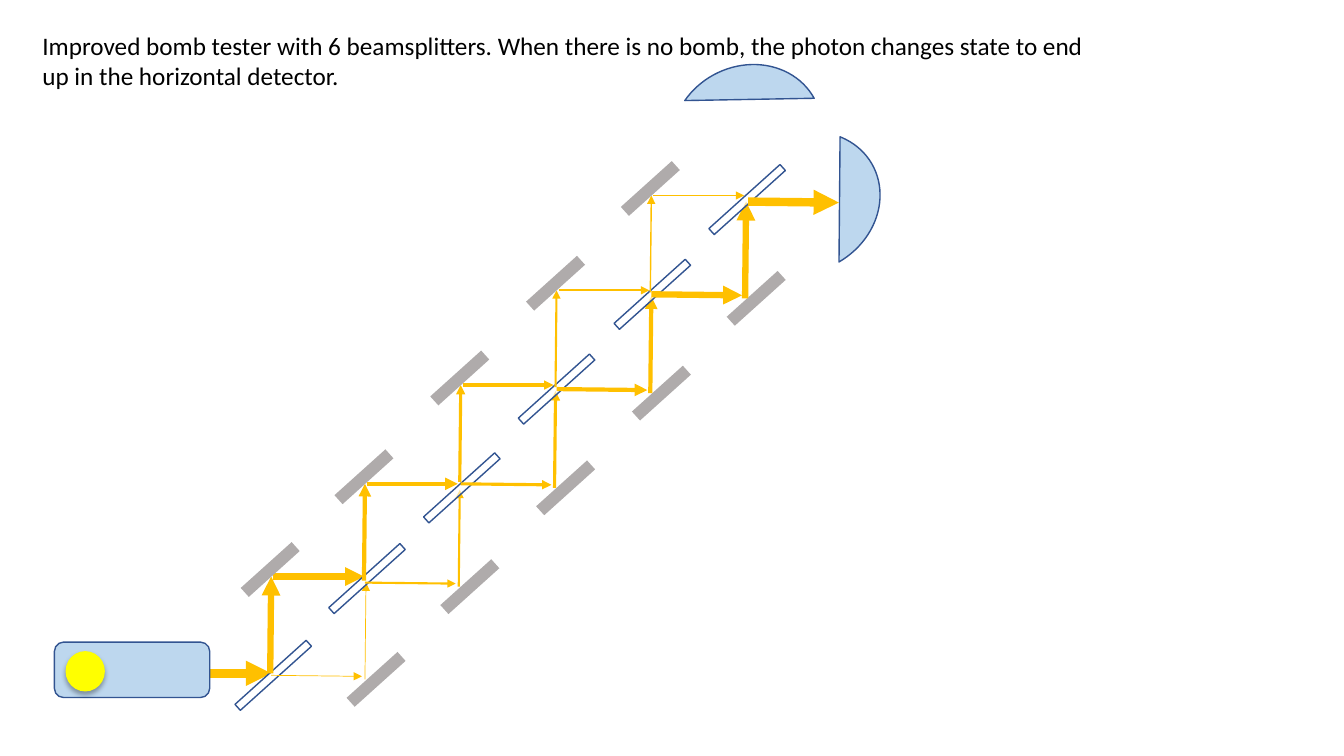
import dataclasses
import pptx
import pptx.dml.color
import pptx.enum.shapes
import pptx.enum.text
import pptx.oxml
import pptx.oxml.ns
import pptx.util

Inches = pptx.util.Inches
Pt = pptx.util.Pt
Kind = pptx.enum.shapes.MSO_SHAPE


@dataclasses.dataclass(frozen=True)
class Theme:
    font: str = "Calibri"
    size: float = 18
    ink: str = "000000"
    beam: str = "FFC000"
    mirror: str = "AFABAB"
    glass: str = "FFFFFF"
    body: str = "BDD7EE"
    edge: str = "325491"
    photon: str = "FFFF00"
    main: float = 6


THEME = Theme()
TILT = 48
STAGES = [
    ((2.68, 6.68), (2.71, 6.70), 4.5, 0.5),
    ((3.61, 5.76), (3.64, 5.74), 3, 1.5),
    ((4.56, 4.78), (4.58, 4.84), 2.25, 2.25),
    ((5.51, 3.84), (5.52, 3.86), 1.5, 3),
    ((6.45, 2.90), (6.47, 2.92), 1, 4.5),
]


def rgb(code):
    return pptx.dml.color.RGBColor.from_string(code)


def add_xml(parent, body):
    parent.append(pptx.oxml.parse_xml(body.replace(
        ">", " " + pptx.oxml.ns.nsdecls("a") + ">", 1)))


def solid(slide, kind, box, fill, edge=None, turn=0):
    shape = slide.shapes.add_shape(kind, *[Inches(v) for v in box])
    shape.shadow.inherit = False
    shape.rotation = turn
    shape.fill.solid()
    shape.fill.fore_color.rgb = rgb(fill)
    if edge:
        shape.line.color.rgb = rgb(edge)
        shape.line.width = Pt(1)
    else:
        shape.line.fill.background()
    return shape


def beam(slide, start, end, width):
    line = slide.shapes.add_connector(
        pptx.enum.shapes.MSO_CONNECTOR.STRAIGHT,
        *[Inches(v) for v in (*start, *end)])
    line.line.color.rgb = rgb(THEME.beam)
    line.line.width = Pt(width)
    add_xml(line.line._get_or_add_ln(), '<a:tailEnd type="triangle"></a:tailEnd>')
    add_xml(line._element.spPr, "<a:effectLst></a:effectLst>")


def plate(slide, center, size, fill, edge=None):
    x, y = center
    w, h = size
    return solid(slide, Kind.RECTANGLE, (x - w / 2, y - h / 2, w, h),
                 fill, edge, TILT)


def mirror(slide, center):
    plate(slide, center, (0.12, 0.68), THEME.mirror)


def splitter(slide, center):
    glass = plate(slide, center, (0.08, 0.95), THEME.glass, THEME.edge)
    color = glass._element.spPr.find(".//" + pptx.oxml.ns.qn("a:srgbClr"))
    add_xml(color, '<a:alpha val="60000"></a:alpha>')


def stage(slide, origin, center, upper, lower):
    def at(dx, dy):
        return origin[0] + dx, origin[1] + dy

    splitter(slide, center)
    beam(slide, origin, at(0.01, -0.96), upper)
    beam(slide, at(0.03, -0.96), at(0.93, -0.96), upper)
    mirror(slide, at(0, -1.03))
    beam(slide, at(0.01, 0.02), at(0.91, 0.03), lower)
    mirror(slide, at(1.05, 0.06))
    beam(slide, at(0.94, 0.06), at(0.95, -0.9), lower)


def source(slide, box):
    x, y, w, h = box
    mid = y + 0.31
    beam(slide, (x + 0.3, mid), (x + w + 0.61, mid), THEME.main)
    solid(slide, Kind.FLOWCHART_ALTERNATE_PROCESS, box, THEME.body, THEME.edge)
    ball = solid(slide, Kind.OVAL, (x + 0.11, y + 0.09, 0.39, 0.4), THEME.photon)
    props = ball._element.spPr
    props.remove(props.find(pptx.oxml.ns.qn("a:effectLst")))
    add_xml(props, '<a:effectLst><a:outerShdw blurRad="%d" dist="%d" dir="5400000">'
            '<a:srgbClr val="000000"><a:alpha val="32000"/></a:srgbClr>'
            '</a:outerShdw></a:effectLst>' % (Pt(3.5), Pt(2.2)))


def sensor(slide, box, turn):
    chord = solid(slide, Kind.CHORD, box, THEME.body, THEME.edge, turn)
    chord.adjustments[0] = 89.03
    chord.adjustments[1] = 162


def title(slide, box, text):
    shape = slide.shapes.title
    shape.left, shape.top, shape.width, shape.height = [Inches(v) for v in box]
    frame = shape.text_frame
    frame.text = text
    frame.word_wrap = True
    frame.auto_size = pptx.enum.text.MSO_AUTO_SIZE.SHAPE_TO_FIT_TEXT
    frame.vertical_anchor = pptx.enum.text.MSO_ANCHOR.TOP
    para = frame.paragraphs[0]
    para.alignment = pptx.enum.text.PP_ALIGN.LEFT
    para.line_spacing = 1.0
    para.space_before = Pt(0)
    font = para.runs[0].font
    font.name = THEME.font
    font.size = Pt(THEME.size)
    font.color.rgb = rgb(THEME.ink)


def main():
    deck = pptx.Presentation()
    deck.slide_width, deck.slide_height = Inches(13.33), Inches(7.5)
    slide = deck.slides.add_slide(deck.slide_layouts[5])
    title(slide, (0.32, 0.25, 10.71, 0.71),
          "Improved bomb tester with 6 beamsplitters. When there is no bomb, "
          "the photon changes state to end up in the horizontal detector.")
    sensor(slide, (6.72, 0.58, 1.37, 1.53), 61.1)
    sensor(slide, (7.21, 1.33, 1.54, 1.36), 149.9)
    source(slide, (0.54, 6.37, 1.54, 0.55))
    for part in STAGES:
        stage(slide, *part)
    splitter(slide, (7.41, 1.98))
    beam(slide, (7.42, 2), (8.32, 2.01), THEME.main)
    deck.save("out.pptx")


if __name__ == "__main__":
    main()
